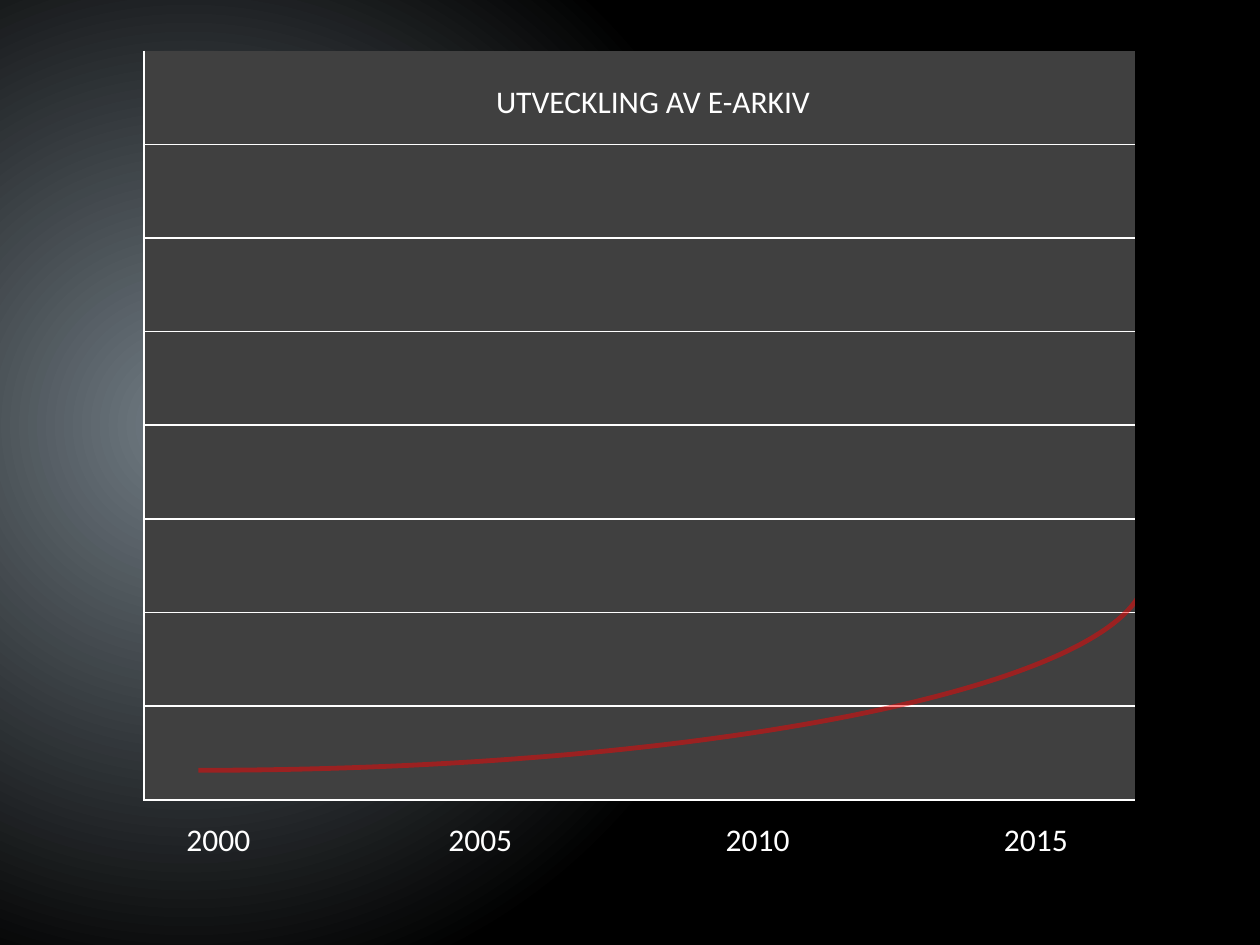
import lxml.etree
import pptx
import pptx.dml.color
import pptx.enum.shapes
import pptx.enum.text
import pptx.oxml.ns
import pptx.util

Cm = pptx.util.Cm
Pt = pptx.util.Pt
qn = pptx.oxml.ns.qn

WHITE = "FFFFFF"
BLACK = "000000"
ROW_COUNT = 8
TABLE_HEIGHT = 15.11


def color(hex_string):
    return pptx.dml.color.RGBColor.from_string(hex_string)


def add_text(page, text, left, top, width, height=1.02, size=18, font="Calibri", fill=WHITE):
    box = page.shapes.add_textbox(Cm(left), Cm(top), Cm(width), Cm(height))
    box.text_frame.word_wrap = False
    box.text_frame.auto_size = pptx.enum.text.MSO_AUTO_SIZE.SHAPE_TO_FIT_TEXT
    span = box.text_frame.paragraphs[0].add_run()
    span.text = text
    span.font.size = Pt(size)
    span.font.name = font
    span.font.color.rgb = color(fill)


deck = pptx.Presentation()
deck.slide_width = Cm(25.4)
deck.slide_height = Cm(19.05)
page = deck.slides.add_slide(deck.slide_layouts[6])

# Background: a circular glow from the left edge
background = page.background.fill
background.gradient()
for stop, (position, shade) in zip(background.gradient_stops, [(0, "717C84"), (0.75, BLACK)]):
    stop.position = position
    stop.color.rgb = color(shade)
gradient = page.element.find(".//" + qn("a:gradFill"))
gradient.remove(gradient.find(qn("a:lin")))
glow = lxml.etree.SubElement(gradient, qn("a:path"), path="circle")
lxml.etree.SubElement(glow, qn("a:fillToRect"), l="15000", t="50000", r="85000", b="60000")

# Ruled chart area
frame = page.shapes.add_table(ROW_COUNT, 1, Cm(2.9), Cm(1.02), Cm(19.99), Cm(TABLE_HEIGHT))
table = frame.table
table.first_row = False
table.horz_banding = False
style = frame.element.find(".//" + qn("a:tableStyleId"))
style.text = "{2D5ABB26-0587-4C30-8999-92F81FD0307C}"  # no style, no grid
for row in table.rows:
    row.height = Cm(TABLE_HEIGHT / ROW_COUNT)
    cell = row.cells[0]
    cell.fill.solid()
    cell.fill.fore_color.rgb = color("404040")
    properties = cell.fill._xPr
    for index, side in enumerate(["a:lnL", "a:lnB"]):
        border = lxml.etree.Element(qn(side), w=str(Pt(1)))
        solid = lxml.etree.SubElement(border, qn("a:solidFill"))
        lxml.etree.SubElement(solid, qn("a:srgbClr"), val=WHITE)
        properties.insert(index, border)

for year, left in [("2000", 3.51), ("2005", 8.79), ("2010", 14.38), ("2015", 19.99)]:
    add_text(page, year, left, 16.41, 1.93)

# Growth curve
curve = page.shapes.add_shape(
    pptx.enum.shapes.MSO_SHAPE.ARC, Cm(0), Cm(-7.57), Cm(8), Cm(38.2))
curve.rotation = 90
curve.shadow.inherit = False
curve.fill.background()
curve.line.color.rgb = color("FF0000")
curve.line.width = Pt(2.75)
red = curve.element.find(".//" + qn("a:ln")).find(".//" + qn("a:srgbClr"))
lxml.etree.SubElement(red, qn("a:alpha"), val="48000")

# Black cover over the end of the curve
cover = page.shapes.add_shape(
    pptx.enum.shapes.MSO_SHAPE.RECTANGLE, Cm(22.91), Cm(9.32), Cm(1.8), Cm(5.21))
cover.shadow.inherit = False
cover.fill.solid()
cover.fill.fore_color.rgb = color(BLACK)
cover.line.color.rgb = color(BLACK)
cover.line.width = Pt(1.25)

add_text(page, "UTVECKLING AV E-ARKIV", 9.75, 1.52, 7.06)

deck.save("out.pptx")
